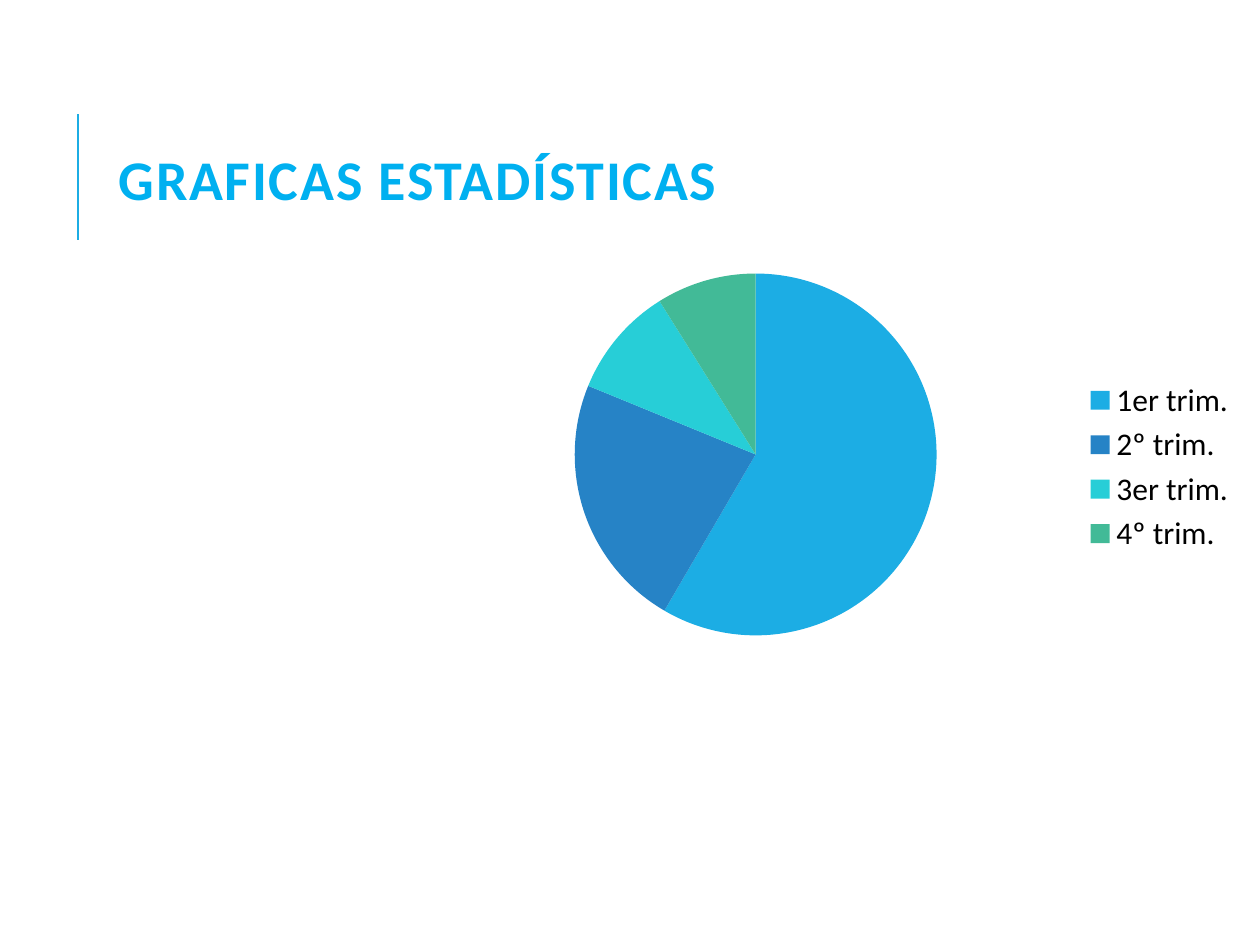
from lxml import etree
from pptx import Presentation
from pptx.chart.data import CategoryChartData
from pptx.dml.color import RGBColor
from pptx.enum.chart import XL_CHART_TYPE, XL_LEGEND_POSITION
from pptx.enum.shapes import MSO_CONNECTOR
from pptx.enum.text import MSO_ANCHOR, MSO_AUTO_SIZE, PP_ALIGN
from pptx.oxml import parse_xml
from pptx.oxml.ns import nsdecls, qn
from pptx.util import Pt

PIE = XL_CHART_TYPE.PIE
RIGHT = XL_LEGEND_POSITION.RIGHT
STRAIGHT = MSO_CONNECTOR.STRAIGHT
MIDDLE = MSO_ANCHOR.MIDDLE
NO_FIT = MSO_AUTO_SIZE.NONE
LEFT = PP_ALIGN.LEFT

EMU_PER_PX = 914400 / 126
TITLE_ONLY = 5


def px(n):
    return round(n * EMU_PER_PX)


def rgb(value):
    return RGBColor.from_string(value)


def write(tf, text, size, color, font, bold=False, spacing=0, line_spacing=1.0):
    """Put one formatted run in the first paragraph; spacing is in points."""
    p = tf.paragraphs[0]
    p.alignment = LEFT
    p.line_spacing = line_spacing
    r = p.add_run()
    r.text = text
    r.font.size = Pt(size)
    r.font.bold = bold
    r.font.name = font
    r.font.color.rgb = rgb(color)
    r.font._element.set("spc", str(spacing * 100))


class SlideBuilder:
    """Holds the style and the current slide."""

    font = "Calibri"
    accent = "1CADE4"
    title_color = "00B0F0"
    text_color = "000000"

    def __init__(self, prs):
        self.s = prs.slides.add_slide(prs.slide_layouts[TITLE_ONLY])

    def title(self, text, x, y, w, h):
        sp = self.s.shapes.title
        sp.left, sp.top, sp.width, sp.height = map(px, (x, y, w, h))
        tf = sp.text_frame
        tf.word_wrap = True
        tf.auto_size = NO_FIT
        tf.vertical_anchor = MIDDLE
        write(tf, text, 32, self.title_color, self.font,
              bold=True, spacing=1, line_spacing=0.8)

    def line(self, x1, y1, x2, y2, width):
        c = self.s.shapes.add_connector(STRAIGHT, *map(px, (x1, y1, x2, y2)))
        c.line.color.rgb = rgb(self.accent)
        c.line.width = Pt(width)
        etree.SubElement(c._element.spPr, qn("a:effectLst"))

    def pie(self, name, slices, box, plot):
        """Draw (label, value, colour) slices; plot is in fractions of the box."""
        data = CategoryChartData()
        data.categories = [label for label, _, _ in slices]
        data.add_series(name, [value for _, value, _ in slices])
        chart = self.s.shapes.add_chart(PIE, *map(px, box), data).chart
        chart.has_title = False
        chart.font.name = self.font
        chart.font.size = Pt(18)
        chart.font.color.rgb = rgb(self.text_color)
        chart.has_legend = True
        chart.legend.position = RIGHT
        chart.legend.include_in_layout = False

        pie = chart.plots[0]
        pie.vary_by_categories = True
        for i, (_, _, color) in enumerate(slices):
            fill = pie.series[0].points[i].format.fill
            fill.solid()
            fill.fore_color.rgb = rgb(color)
        self.place_plot(chart, plot)

    def place_plot(self, chart, plot):
        area = chart._chartSpace.chart.plotArea
        for old in area.findall(qn("c:layout")):
            area.remove(old)
        sizes = "".join(f'<c:{k} val="{v}"/>' for k, v in zip("xywh", plot))
        area.insert(0, parse_xml(
            f'<c:layout {nsdecls("c")}><c:manualLayout>'
            '<c:layoutTarget val="inner"/><c:xMode val="edge"/>'
            f'<c:yMode val="edge"/>{sizes}</c:manualLayout></c:layout>'))


def main():
    prs = Presentation()
    prs.slide_width, prs.slide_height = px(1260), px(945)

    b = SlideBuilder(prs)
    b.line(78, 240, 78, 114, 1.5)
    b.title("GRAFICAS ESTADÍSTICAS", 106, 81, 1004, 207)
    quarters = [
        ("1er trim.", 59, "1CADE4"),
        ("2º trim.", 23, "2683C6"),
        ("3er trim.", 10, "27CED7"),
        ("4º trim.", 9, "42BA97"),
    ]
    b.pie("Series 1", quarters, box=(115, 155, 1134, 624),
          plot=(0.28, 0.19, 0.57, 0.58))
    prs.save("out.pptx")


if __name__ == "__main__":
    main()
